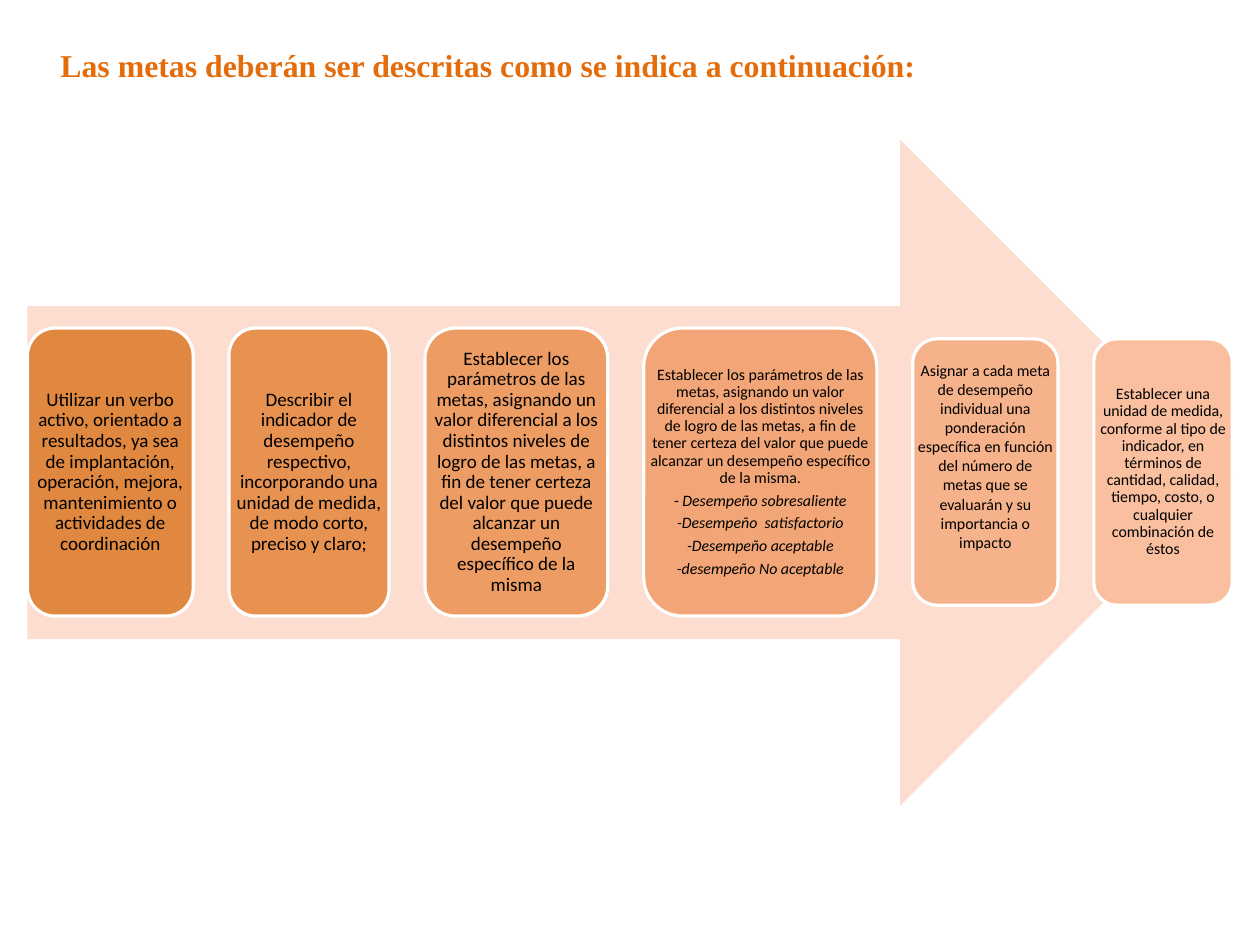
"""Build the slide that shows how goals must be described."""
from dataclasses import dataclass

from pptx import Presentation
from pptx.dml.color import RGBColor
from pptx.enum.shapes import MSO_SHAPE
from pptx.enum.text import MSO_ANCHOR, PP_ALIGN
from pptx.util import Inches, Pt

PAGE_W, PAGE_H = 28 / 2.54, 21 / 2.54
LEFT, RIGHT, MID = 0.24, 10.78, 4.13


@dataclass(frozen=True)
class Run:
    """A piece of text in one style."""
    text: str
    slant: bool = False


@dataclass(frozen=True)
class Step:
    """A rounded card on the arrow."""
    width: float
    height: float
    fill: str
    size: int
    paras: list[list[Run]]
    inset: float = 0.04
    foot: float = 0.04
    pitch: float = 0.9


PARAMS = ("Establecer los parámetros de las metas, asignando un valor diferencial "
          "a los distintos niveles de logro de las metas, a fin de tener certeza "
          "del valor que puede alcanzar un desempeño específico de la misma")

STEPS = [
    Step(1.45, 2.52, "E08840", 12, [[Run(
        "Utilizar un verbo activo, orientado a resultados, ya sea de implantación, "
        "operación, mejora, mantenimiento o actividades de coordinación")]], 0.05, 0.05),
    Step(1.4, 2.52, "E79251", 12, [[Run(
        "Describir el indicador de desempeño respectivo, incorporando una unidad "
        "de medida, de modo corto, preciso y claro;")]], 0.05, 0.05),
    Step(1.6, 2.52, "ED9C63", 12, [[Run(PARAMS)]], 0.05, 0.05),
    Step(2.04, 2.52, "F2A677", 10, [
        [Run(PARAMS + ".")],
        [Run("- "), Run("Desempeño sobresaliente", True)],
        [Run("-Desempeño  satisfactorio", True)],
        [Run("-Desempeño aceptable", True)],
        [Run("-desempeño No aceptable", True)]]),
    Step(1.27, 2.33, "F6B28B", 10, [[Run(
        "Asignar a cada meta de desempeño individual una ponderación específica "
        "en función del número de metas que se evaluarán y su importancia o "
        "impacto")]], foot=0.32, pitch=1.0),
    Step(1.21, 2.33, "FABF9F", 10, [[Run(
        "Establecer una unidad de medida, conforme al tipo de indicador, en "
        "términos de cantidad, calidad, tiempo, costo, o cualquier combinación "
        "de éstos")]]),
]


def color(code: str) -> RGBColor:
    """Turn a hex string into a colour."""
    return RGBColor.from_string(code)


def add_run(para, run: Run, size: int, face: str, ink: str, bold: bool = False) -> None:
    """Add one styled run to a paragraph."""
    part = para.add_run()
    part.text = run.text
    font = part.font
    font.name, font.size, font.bold, font.italic = face, Pt(size), bold, run.slant
    font.color.rgb = color(ink)


def add_form(slide, kind: MSO_SHAPE, x: float, y: float, w: float, h: float,
             fill: str, edge: str = "") -> None:
    """Add a flat filled shape, with an outline if an edge colour is given."""
    form = slide.shapes.add_shape(kind, Inches(x), Inches(y), Inches(w), Inches(h))
    form.shadow.inherit = False
    form.fill.solid()
    form.fill.fore_color.rgb = color(fill)
    if edge:
        form.line.color.rgb = color(edge)
        form.line.width = Pt(2)
    else:
        form.line.fill.background()


def add_step(slide, step: Step, x: float) -> None:
    """Draw one card and its centred text."""
    y = MID - step.height / 2
    add_form(slide, MSO_SHAPE.ROUNDED_RECTANGLE, x, y, step.width, step.height,
             step.fill, "FFFFFF")
    box = slide.shapes.add_textbox(Inches(x), Inches(y), Inches(step.width),
                                   Inches(step.height))
    frame = box.text_frame
    frame.word_wrap = True
    frame.vertical_anchor = MSO_ANCHOR.MIDDLE
    frame.margin_left = frame.margin_right = frame.margin_top = Inches(step.inset)
    frame.margin_bottom = Inches(step.foot)
    for index, runs in enumerate(step.paras):
        para = frame.add_paragraph() if index else frame.paragraphs[0]
        para.alignment = PP_ALIGN.CENTER
        para.line_spacing = step.pitch
        para.space_after = Pt(0.35 * step.size)
        for run in runs:
            add_run(para, run, step.size, "Calibri", "000000")


def add_title(slide) -> None:
    """Write the heading."""
    box = slide.shapes.add_textbox(Inches(0.43), Inches(0.35), Inches(10.59), Inches(0.44))
    box.text_frame.word_wrap = True
    add_run(box.text_frame.paragraphs[0],
            Run("Las metas deberán ser descritas como se indica a continuación:"),
            20, "Times New Roman", "E46C0A", True)


def main() -> None:
    """Build and save the deck."""
    deck = Presentation()
    deck.slide_width, deck.slide_height = Inches(PAGE_W), Inches(PAGE_H)
    slide = deck.slides.add_slide(deck.slide_layouts[6])
    add_title(slide)
    add_form(slide, MSO_SHAPE.RIGHT_ARROW, LEFT, 1.22, 10.55, 5.83, "FCDDCF")
    gap = (RIGHT - LEFT - sum(step.width for step in STEPS)) / (len(STEPS) - 1)
    x = LEFT
    for step in STEPS:
        add_step(slide, step, x)
        x += step.width + gap
    deck.save("out.pptx")


if __name__ == "__main__":
    main()
